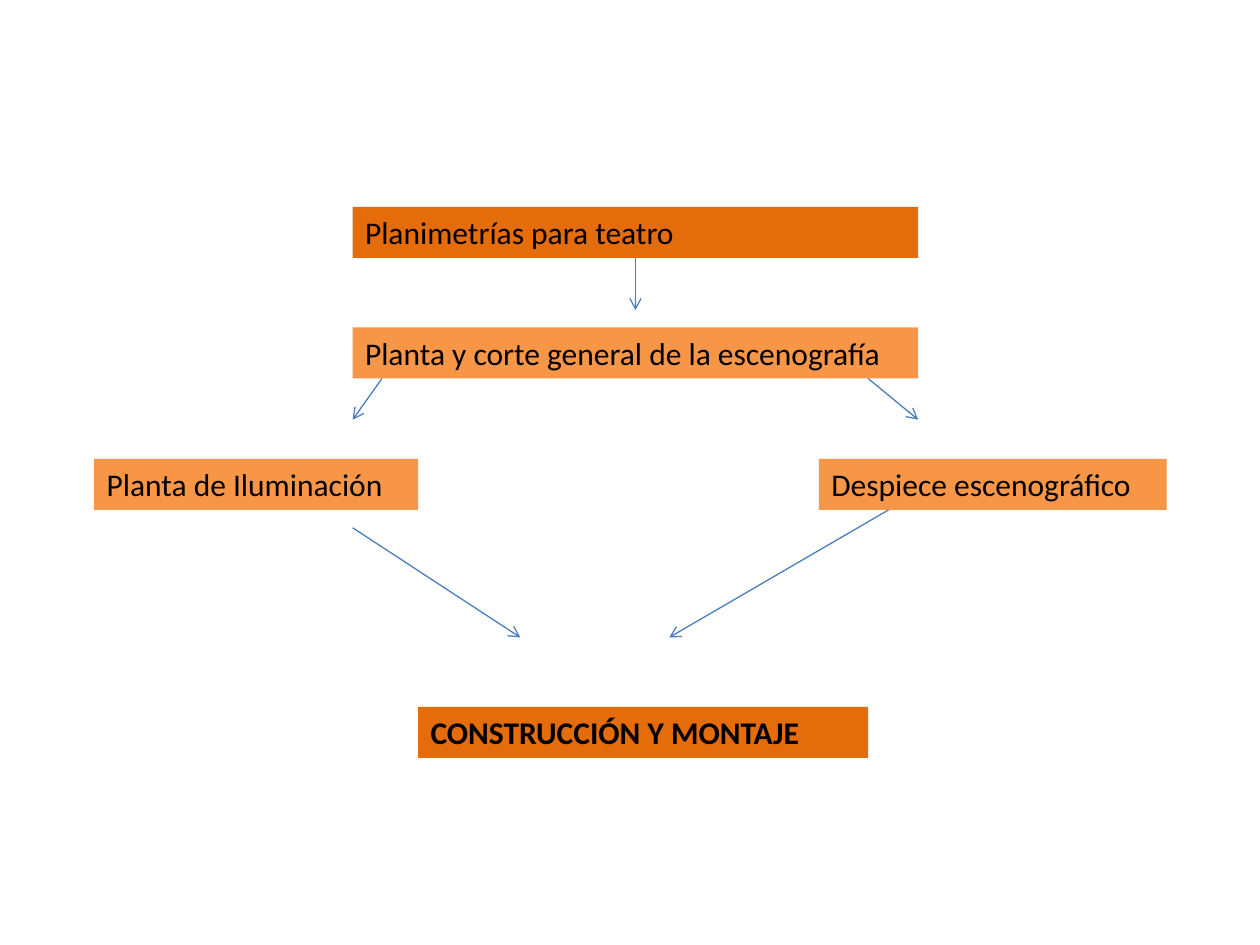
from lxml import etree
from pptx import Presentation
from pptx import util as u
from pptx.dml.color import RGBColor
from pptx.enum import shapes, text
from pptx.oxml import ns

DARK_ORANGE = RGBColor(0xE4, 0x6C, 0x0A)
ORANGE = RGBColor(0xF7, 0x96, 0x46)
BLUE = RGBColor(0x4B, 0x7E, 0xBC)
BLACK = RGBColor(0, 0, 0)


class Flow:
    """Draws the steps and arrows of a flow chart in one style."""

    font = "Calibri"
    size = u.Pt(18)
    height = 1.03

    def __init__(self, slide):
        self.slide = slide

    def step(self, wording, left, top, width, fill, bold=False):
        box = self.slide.shapes.add_textbox(
            u.Cm(left), u.Cm(top), u.Cm(width), u.Cm(self.height))
        box.fill.solid()
        box.fill.fore_color.rgb = fill
        frame = box.text_frame
        frame.word_wrap = True
        frame.auto_size = text.MSO_AUTO_SIZE.SHAPE_TO_FIT_TEXT
        frame.text = wording
        for run in frame.paragraphs[0].runs:
            run.font.name = self.font
            run.font.size = self.size
            run.font.bold = bold
            run.font.color.rgb = BLACK

    def arrow(self, start, end):
        link = self.slide.shapes.add_connector(
            shapes.MSO_CONNECTOR.STRAIGHT, *map(u.Cm, start + end))
        link.line.color.rgb = BLUE
        link.line.width = u.Pt(0.75)
        etree.SubElement(link.line._get_or_add_ln(), ns.qn("a:tailEnd"), type="arrow")
        etree.SubElement(link._element.spPr, ns.qn("a:effectLst"))


def main():
    deck = Presentation()
    deck.slide_width, deck.slide_height = u.Cm(25.4), u.Cm(19.05)
    flow = Flow(deck.slides.add_slide(deck.slide_layouts[6]))

    plans_left, plans_width = 7.11, 11.4
    plans_center = plans_left + plans_width / 2
    plans_top, general_top, detail_top, build_top = 4.17, 6.6, 9.25, 14.25
    plans_bottom, general_bottom, detail_bottom = (
        top + flow.height for top in (plans_top, general_top, detail_top))
    detail_arrow_end, build_arrow_end = 8.46, 12.85

    flow.step("Planimetrías para teatro", plans_left, plans_top, plans_width, DARK_ORANGE)
    flow.step("Planta de Iluminación", 1.9, detail_top, 6.53, ORANGE)
    flow.step("Despiece escenográfico", 16.51, detail_top, 7.01, ORANGE)
    flow.step("Planta y corte general de la escenografía",
              plans_left, general_top, plans_width, ORANGE)

    flow.arrow((plans_left, 10.64), (10.49, build_arrow_end))
    flow.arrow((17.91, detail_bottom), (13.49, build_arrow_end))
    flow.arrow((plans_center, plans_bottom), (plans_center, 6.25))
    flow.arrow((7.7, general_bottom), (plans_left, detail_arrow_end))
    flow.arrow((17.5, general_bottom), (plans_left + plans_width, detail_arrow_end))

    flow.step("CONSTRUCCIÓN Y MONTAJE", 8.43, build_top, 9.07, DARK_ORANGE, bold=True)
    deck.save("out.pptx")


if __name__ == "__main__":
    main()
